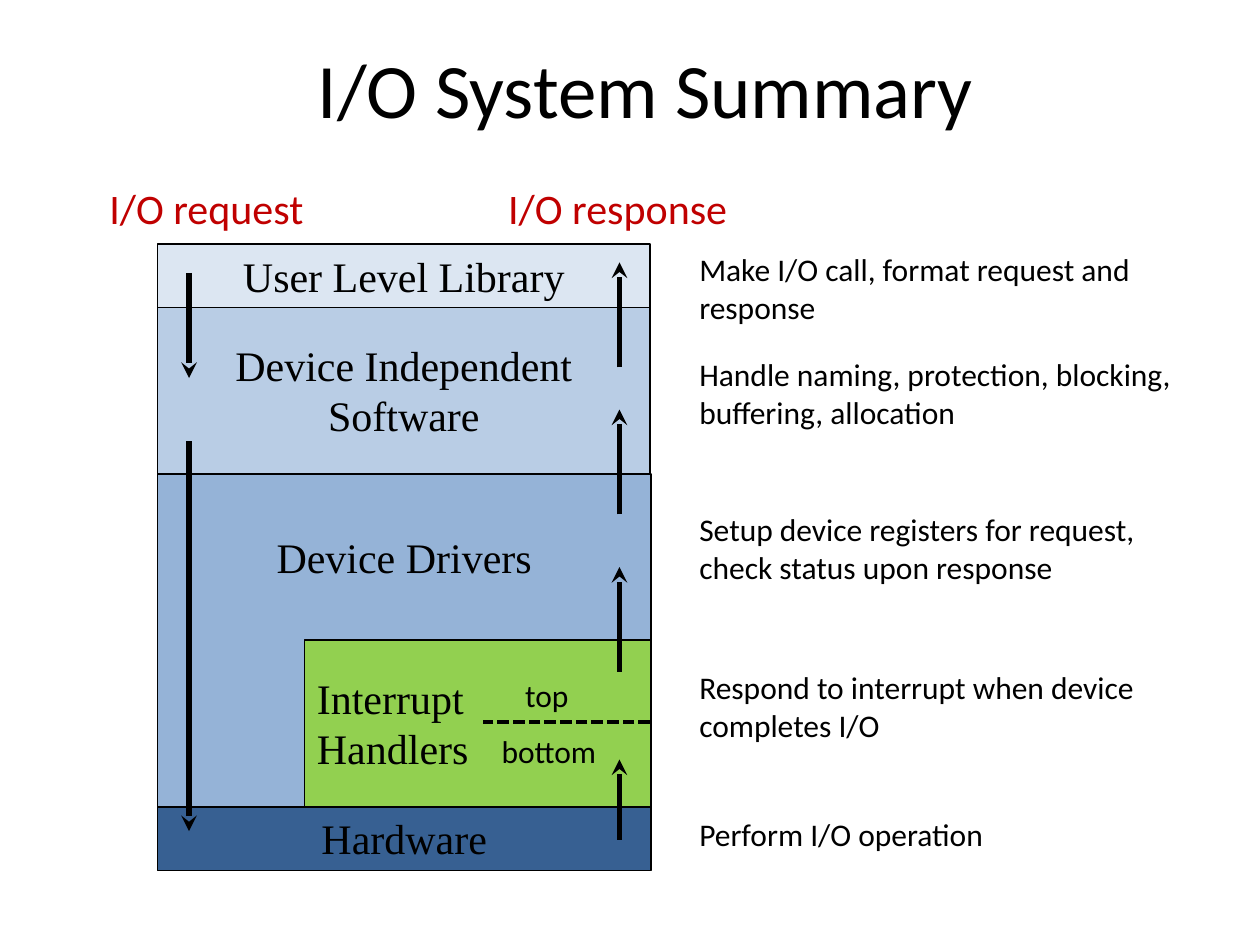
from dataclasses import dataclass

from lxml.etree import SubElement
from pptx import Presentation
from pptx.dml.color import RGBColor
from pptx.enum.dml import MSO_LINE
from pptx.enum.shapes import MSO_CONNECTOR, MSO_SHAPE
from pptx.enum.text import MSO_ANCHOR, PP_ALIGN
from pptx.oxml.ns import qn
from pptx.util import Pt


@dataclass(frozen=True)
class Theme:
    ink: str = "000000"
    accent: str = "C00000"
    library: str = "DCE6F2"
    independent: str = "B9CDE5"
    drivers: str = "95B3D7"
    interrupts: str = "92D050"
    hardware: str = "376092"
    body_font: str = "Calibri"
    layer_font: str = "Times New Roman"
    title_size: float = 44
    label_size: float = 24
    note_size: float = 18


class SlideBuilder:
    def __init__(self, slide, theme):
        self.slide = slide
        self.theme = theme

    def fill_text(self, shape, lines, font, size, color, align, top=3.6, wrap=True):
        frame = shape.text_frame
        frame.word_wrap = wrap
        frame.margin_top = Pt(top)
        frame.vertical_anchor = MSO_ANCHOR.TOP
        frame.text = "\n".join(lines)
        for paragraph in frame.paragraphs:
            paragraph.alignment = align
            paragraph.font.name = font
            paragraph.font.size = Pt(size)
            paragraph.font.color.rgb = RGBColor.from_string(color)
        return frame

    def layer(self, box, fill, lines, top=3.6, align=PP_ALIGN.CENTER):
        shape = self.slide.shapes.add_shape(MSO_SHAPE.RECTANGLE, *map(Pt, box))
        shape.shadow.inherit = False
        shape.fill.solid()
        shape.fill.fore_color.rgb = RGBColor.from_string(fill)
        shape.line.color.rgb = RGBColor.from_string(self.theme.ink)
        shape.line.width = Pt(1)
        self.fill_text(shape, lines, self.theme.layer_font, self.theme.label_size,
                       self.theme.ink, align, top)

    def text(self, box, words, size, color=None, align=PP_ALIGN.LEFT, wrap=True):
        shape = self.slide.shapes.add_textbox(*map(Pt, box))
        return self.fill_text(shape, [words], self.theme.body_font, size,
                              color or self.theme.ink, align, wrap=wrap)

    def title(self, box, words):
        frame = self.text(box, words, self.theme.title_size, align=PP_ALIGN.CENTER)
        frame.vertical_anchor = MSO_ANCHOR.MIDDLE

    def line(self, start, end, width):
        connector = self.slide.shapes.add_connector(
            MSO_CONNECTOR.STRAIGHT, *map(Pt, (*start, *end)))
        connector.line.color.rgb = RGBColor.from_string(self.theme.ink)
        connector.line.width = Pt(width)
        SubElement(connector._element.spPr, qn("a:effectLst"))
        return connector

    def arrow(self, x, start, end):
        connector = self.line((x, start), (x, end), 3)
        outline = connector._element.spPr.find(qn("a:ln"))
        SubElement(outline, qn("a:tailEnd"), type="stealth")

    def divider(self, start, end):
        self.line(start, end, 2.25).line.dash_style = MSO_LINE.SQUARE_DOT


def main():
    presentation = Presentation()
    presentation.slide_width, presentation.slide_height = Pt(720), Pt(540)
    slide = presentation.slides.add_slide(presentation.slide_layouts[6])
    theme = Theme()
    builder = SlideBuilder(slide, theme)

    builder.layer((90, 139.5, 281.5, 36.5), theme.library, ["User Level Library"])
    builder.layer((90, 175.7, 281.5, 109.4), theme.independent,
                  ["Device Independent", "Software"], top=18.2)
    builder.layer((90, 270.7, 282, 211), theme.drivers, ["Device Drivers"], top=33)
    builder.layer((174, 365.8, 198, 109.4), theme.interrupts,
                  ["Interrupt", "Handlers"], top=18.2, align=PP_ALIGN.LEFT)
    builder.layer((90, 461, 282, 36.5), theme.hardware, ["Hardware"])

    builder.title((45, 5, 648, 90), "I/O System Summary")
    for left, width, words in ((54, 128, "I/O request"), (271.5, 163, "I/O response")):
        builder.text((left, 101, width, 36.5), words, theme.label_size,
                     theme.accent, PP_ALIGN.CENTER)

    for start, end in ((156, 216), (252, 475)):
        builder.arrow(108, start, end)
    for start, end in ((480, 434), (384, 324), (294, 234), (210, 150)):
        builder.arrow(354, start, end)

    for top, width, height, words in (
        (139.5, 304, 51, "Make I/O call, format request and response"),
        (199.5, 293, 51, "Handle naming, protection, blocking, buffering, allocation"),
        (288, 276, 51, "Setup device registers for request, check status upon response"),
        (378, 293, 51, "Respond to interrupt when device completes I/O"),
        (462, 271, 29, "Perform I/O operation"),
    ):
        builder.text((392.5, top, width, height), words, theme.note_size)

    builder.divider((371.5, 412.5), (276, 412.5))
    builder.text((293, 383, 39.5, 29), "top", theme.note_size, wrap=False)
    builder.text((279.5, 414.5, 70, 29), "bottom", theme.note_size, wrap=False)

    presentation.save("out.pptx")


if __name__ == "__main__":
    main()
